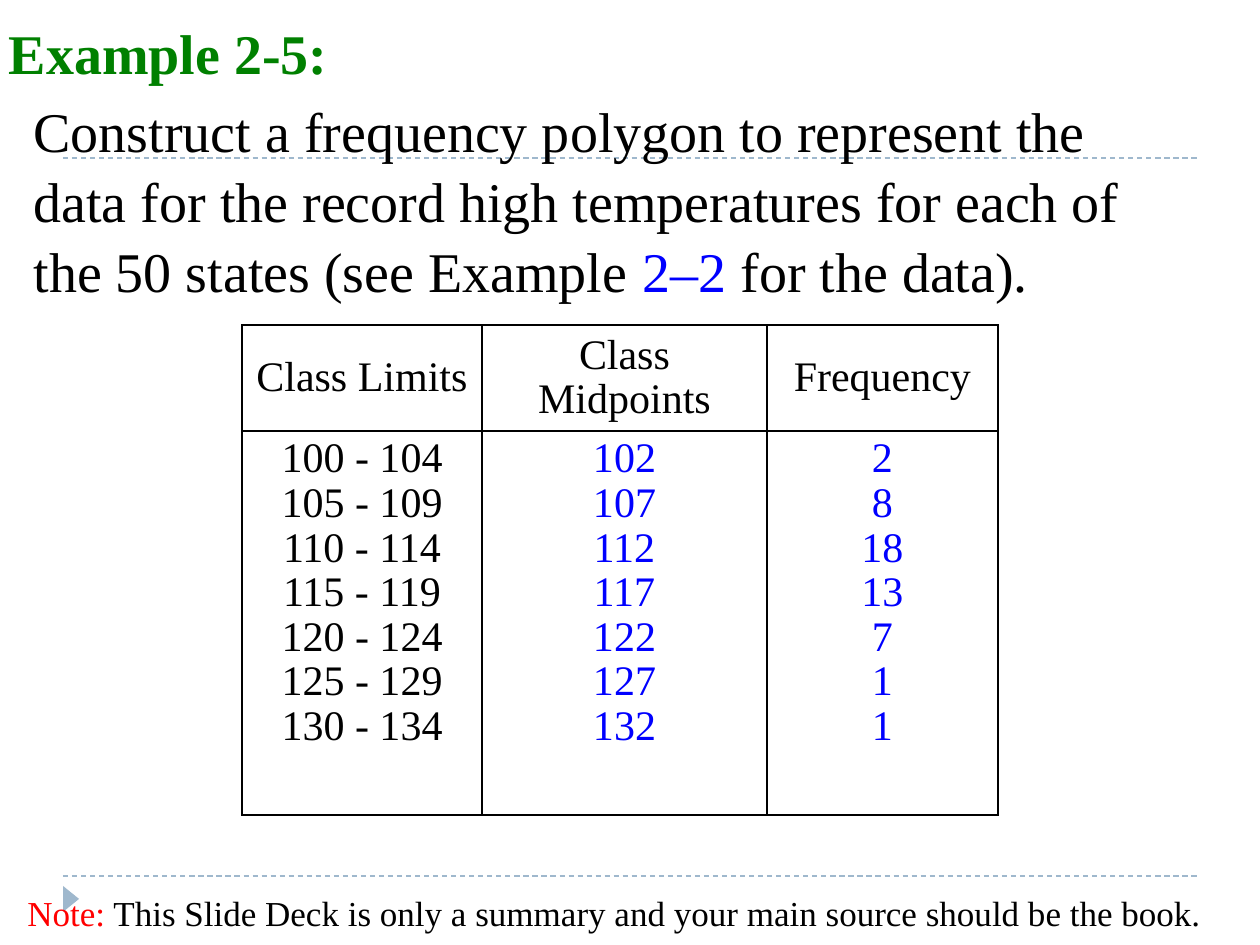
"""Builds a slide with a frequency table for Example 2-5."""
from lxml.etree import SubElement
from pptx import Presentation
from pptx.dml.color import RGBColor
from pptx.enum.dml import MSO_LINE
from pptx.enum.shapes import MSO_CONNECTOR, MSO_SHAPE
from pptx.enum.text import MSO_ANCHOR, MSO_AUTO_SIZE, PP_ALIGN
from pptx.oxml import parse_xml
from pptx.oxml.ns import nsdecls, qn
from pptx.util import Inches, Pt

PX = Inches(1) // 126
BLACK, BLUE, PALE = "000000", "0000FF", "9FB8CD"


def color(code):
    return RGBColor.from_string(code)


def style(par, size, code=None, align=PP_ALIGN.LEFT):
    par.alignment = align
    par.font.name = "Times New Roman"
    par.font.size = Pt(size)
    if code:
        par.font.color.rgb = color(code)


deck = Presentation()
deck.slide_width, deck.slide_height = Inches(10), Inches(7.5)
slide = deck.slides.add_slide(deck.slide_layouts[1])
shapes = slide.shapes
title, body = slide.placeholders

mark = shapes.add_shape(MSO_SHAPE.ISOSCELES_TRIANGLE, 58 * PX, 891 * PX, 26 * PX, 16 * PX)
mark.rotation = 90
mark.shadow.inherit = False
mark.fill.solid()
mark.fill.fore_color.rgb = color(PALE)
mark.line.fill.background()
tree = mark.element.getparent()
tree.insert(2, mark.element)
for y in (158, 876):
    rule = shapes.add_connector(MSO_CONNECTOR.STRAIGHT, 63 * PX, y * PX, 1197 * PX, y * PX)
    rule.line.color.rgb = color(PALE)
    rule.line.width = Pt(0.75)
    rule.line.dash_style = MSO_LINE.DASH
    SubElement(rule.element.spPr, qn("a:effectLst"))
    tree.insert(2, rule.element)

title.left, title.top, title.width, title.height = -73 * PX, 10 * PX, 483 * PX, 84 * PX
title.fill.solid()
title.fill.fore_color.rgb = color("FFFFFF")
title.line.color.rgb = color("FFFFFF")
title.line.width = Pt(1.5)
frame = title.text_frame
frame.text = "Example 2-5:"
frame.auto_size = MSO_AUTO_SIZE.NONE
frame.vertical_anchor = MSO_ANCHOR.MIDDLE
style(frame.paragraphs[0], 32, "008000", PP_ALIGN.CENTER)
frame.paragraphs[0].font.bold = True

body.left, body.top, body.width, body.height = 21 * PX, 84 * PX, 1166 * PX, 262 * PX
frame = body.text_frame
frame.auto_size = MSO_AUTO_SIZE.NONE
frame.margin_top = 10 * PX
par = frame.paragraphs[0]
style(par, 32)
par.line_spacing = 1.04
par.space_before = Pt(0)
props = par._p.get_or_add_pPr()
props.set("marL", "0")
props.set("indent", "0")
SubElement(props, qn("a:buNone"))
for text, code in (
    ("Construct a frequency polygon to represent the data for the record high "
     "temperatures for each of the 50 states (see Example ", BLACK),
    ("2–2", BLUE),
    (" for the data).", BLACK),
):
    run = par.add_run()
    run.text = text
    run.font.color.rgb = color(code)

counts = [2, 8, 18, 13, 7, 1, 1]
lows = range(100, 135, 5)
cols = [
    ("Class Limits", 240, BLACK, [f"{low} - {low + 4}" for low in lows]),
    ("Class Midpoints", 285, BLUE, [str(low + 2) for low in lows]),
    ("Frequency", 231, BLUE, [str(count) for count in counts]),
]
table = shapes.add_table(2, 3, 242 * PX, 325 * PX, 756 * PX, 490 * PX).table
table.first_row = table.horz_banding = False
table.rows[0].height, table.rows[1].height = 106 * PX, 384 * PX
for col, (head, width, code, items) in enumerate(cols):
    table.columns[col].width = width * PX
    for row, (lines, tint) in enumerate((([head], BLACK), (items, code))):
        cell = table.cell(row, col)
        cell.text = "\n".join(lines)
        cell.vertical_anchor = MSO_ANCHOR.TOP if row else MSO_ANCHOR.MIDDLE
        for par in cell.text_frame.paragraphs:
            style(par, 24, tint, PP_ALIGN.CENTER)
            par.line_spacing = 0.96
        props = cell._tc.get_or_add_tcPr()
        for side in ("lnL", "lnR", "lnT", "lnB"):
            props.append(parse_xml(
                f'<a:{side} {nsdecls("a")} w="12700"><a:solidFill>'
                f'<a:srgbClr val="{BLACK}"/></a:solidFill></a:{side}>'))
        cell.fill.background()

note = shapes.add_textbox(15 * PX, 885 * PX, 1229 * PX, 55 * PX)
note.text_frame.word_wrap = True
par = note.text_frame.paragraphs[0]
style(par, 20)
for text, code in (
    ("Note:", "FF0000"),
    (" This Slide Deck is only a summary and your main source should be the book.", BLACK),
):
    run = par.add_run()
    run.text = text
    run.font.color.rgb = color(code)

deck.save("out.pptx")
